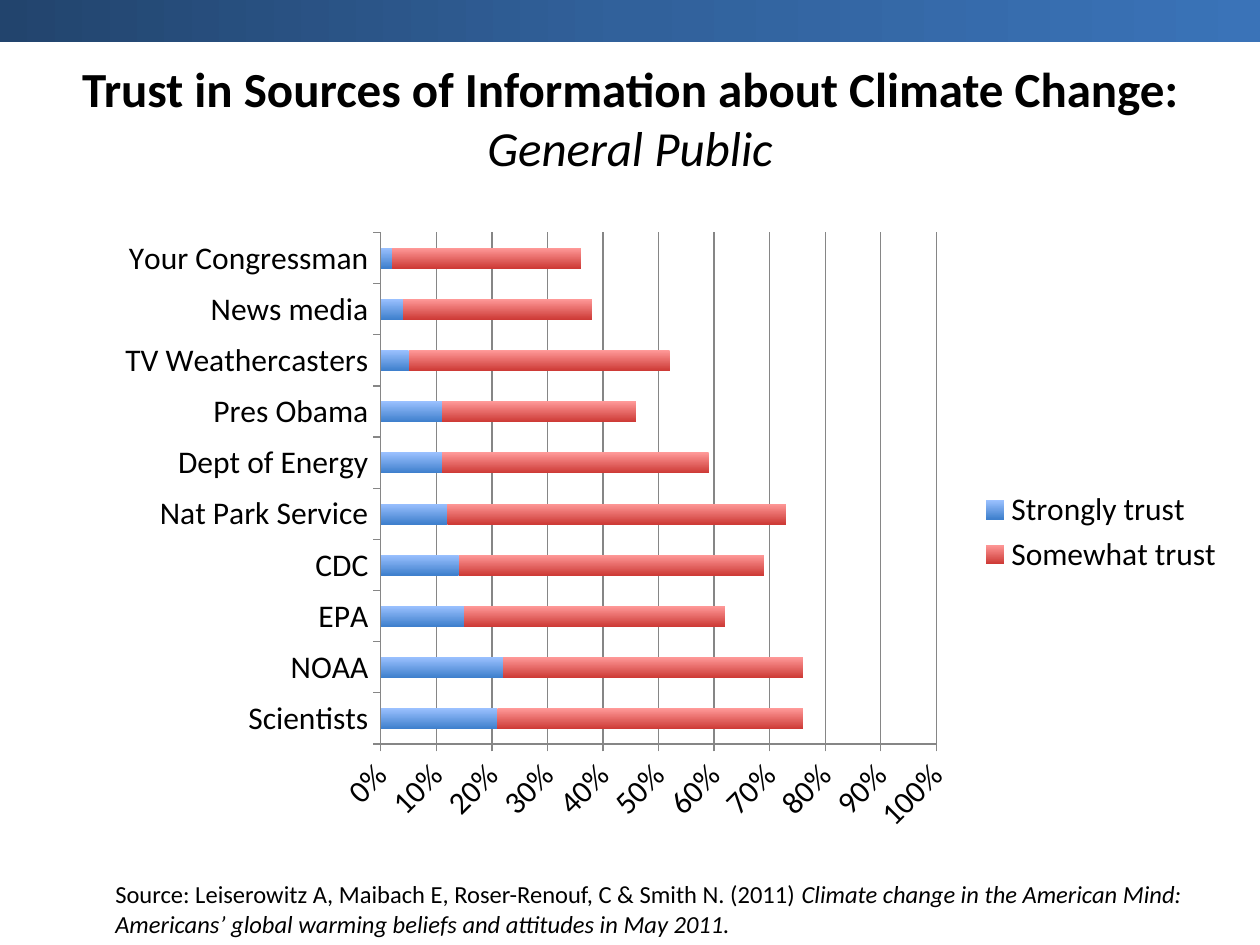
from lxml import etree
from pptx import Presentation
from pptx.chart.data import CategoryChartData
from pptx.dml.color import RGBColor
from pptx.enum.chart import XL_CHART_TYPE, XL_LEGEND_POSITION, XL_TICK_MARK
from pptx.enum.shapes import MSO_SHAPE
from pptx.enum.text import MSO_ANCHOR, PP_ALIGN
from pptx.oxml.ns import qn
from pptx.util import Pt

PX = 914400 / 126
STACKED = XL_CHART_TYPE.BAR_STACKED
RIGHT = XL_LEGEND_POSITION.RIGHT
OUT = XL_TICK_MARK.OUTSIDE
FONT = "Calibri"
BLACK = "000000"
GRAY = "868686"


def box(*sides):
    return [round(side * PX) for side in sides]


def shade(fill, root, angle, *hues):
    """Fill with evenly spaced gradient stops."""
    fill.gradient()
    fill.gradient_angle = angle
    stops = next(root.iter(qn("a:gsLst")))
    for old in list(stops):
        stops.remove(old)
    for i, hue in enumerate(hues):
        place = str(100000 * i // (len(hues) - 1))
        stop = etree.SubElement(stops, qn("a:gs"), pos=place)
        etree.SubElement(stop, qn("a:srgbClr"), val=hue)


prs = Presentation()
prs.slide_width, prs.slide_height = box(1260, 945)
slide = prs.slides.add_slide(prs.slide_layouts[6])

# Top band
band = slide.shapes.add_shape(MSO_SHAPE.RECTANGLE, *box(0, 0, 1260, 42))
band.shadow.inherit = False
band.line.fill.background()
shade(band.fill, band._element.spPr, 0, "22446D", "31619B", "3A73B8")

# Title and source: place, size, anchor, alignment, then runs (text, bold, italic)
texts = [
    ((63, 38, 1134, 158), 28, MSO_ANCHOR.MIDDLE, PP_ALIGN.CENTER, [
        ("Trust in Sources of Information about Climate Change: ", True, False),
        ("General Public", False, True)]),
    ((103, 873, 1134, 72), 14, MSO_ANCHOR.TOP, PP_ALIGN.LEFT, [
        ("Source: Leiserowitz A, Maibach E, Roser-Renouf, C & Smith N. (2011) ",
         False, False),
        ("Climate change in the American Mind: Americans’ global warming "
         "beliefs and attitudes in May 2011.", False, True)]),
]
for place, size, anchor, align, runs in texts:
    frame = slide.shapes.add_textbox(*box(*place)).text_frame
    frame.word_wrap = True
    frame.vertical_anchor = anchor
    para = frame.paragraphs[0]
    para.alignment = align
    for words, bold, slant in runs:
        run = para.add_run()
        run.text = words
        font = run.font
        font.name, font.size = FONT, Pt(size)
        font.bold, font.italic = bold, slant
        font.color.rgb = RGBColor.from_string(BLACK)

# Chart data: source, strongly, somewhat
rows = [
    ("Scientists", 0.21, 0.55),
    ("NOAA", 0.22, 0.54),
    ("EPA", 0.15, 0.47),
    ("CDC", 0.14, 0.55),
    ("Nat Park Service", 0.12, 0.61),
    ("Dept of Energy", 0.11, 0.48),
    ("Pres Obama", 0.11, 0.35),
    ("TV Weathercasters", 0.05, 0.47),
    ("News media", 0.04, 0.34),
    ("Your Congressman", 0.02, 0.34),
]
names, strong, some = zip(*rows)
data = CategoryChartData(number_format="0%")
data.categories = names
data.add_series("Strongly trust", strong)
data.add_series("Somewhat trust", some)

# Chart
chart = slide.shapes.add_chart(STACKED, *box(103, 220, 1134, 624), data).chart
chart.has_title = False
chart.font.name, chart.font.size = FONT, Pt(18)
chart.font.color.rgb = RGBColor.from_string(BLACK)
chart.has_legend = True
chart.legend.position = RIGHT
chart.legend.include_in_layout = False

plot = chart.plots[0]
plot.gap_width, plot.overlap = 150, 100
plot.vary_by_categories = False
hues = [("9BC1FF", "3F80CD"), ("FF9A99", "CE3B37")]
for bar, pair in zip(plot.series, hues):
    shade(bar.format.fill, bar._element, 270, *pair)

# Axes
cat, val = chart.category_axis, chart.value_axis
val.minimum_scale, val.maximum_scale, val.major_unit = 0, 1, 0.1
val.has_major_gridlines = True
val.tick_labels.number_format = "0%"
val.tick_labels.number_format_is_linked = False
for axis in (cat, val):
    axis.major_tick_mark = OUT
    axis.tick_labels.font.size = Pt(18)
for part in (cat, val, val.major_gridlines):
    part.format.line.width = Pt(0.75)
    part.format.line.color.rgb = RGBColor.from_string(GRAY)
next(val._element.iter(qn("a:bodyPr"))).set("rot", "-2700000")

# Plot area position within the chart
area = chart._chartSpace.chart.plotArea
for old in area.findall(qn("c:layout")):
    area.remove(old)
layout = etree.Element(qn("c:layout"))
area.insert(0, layout)
manual = etree.SubElement(layout, qn("c:manualLayout"))
for tag, value in [("layoutTarget", "inner"), ("xMode", "edge"),
                   ("yMode", "edge"), ("x", "0.245"), ("y", "0.02"),
                   ("w", "0.49"), ("h", "0.82")]:
    etree.SubElement(manual, qn("c:" + tag), val=value)

prs.save("out.pptx")
